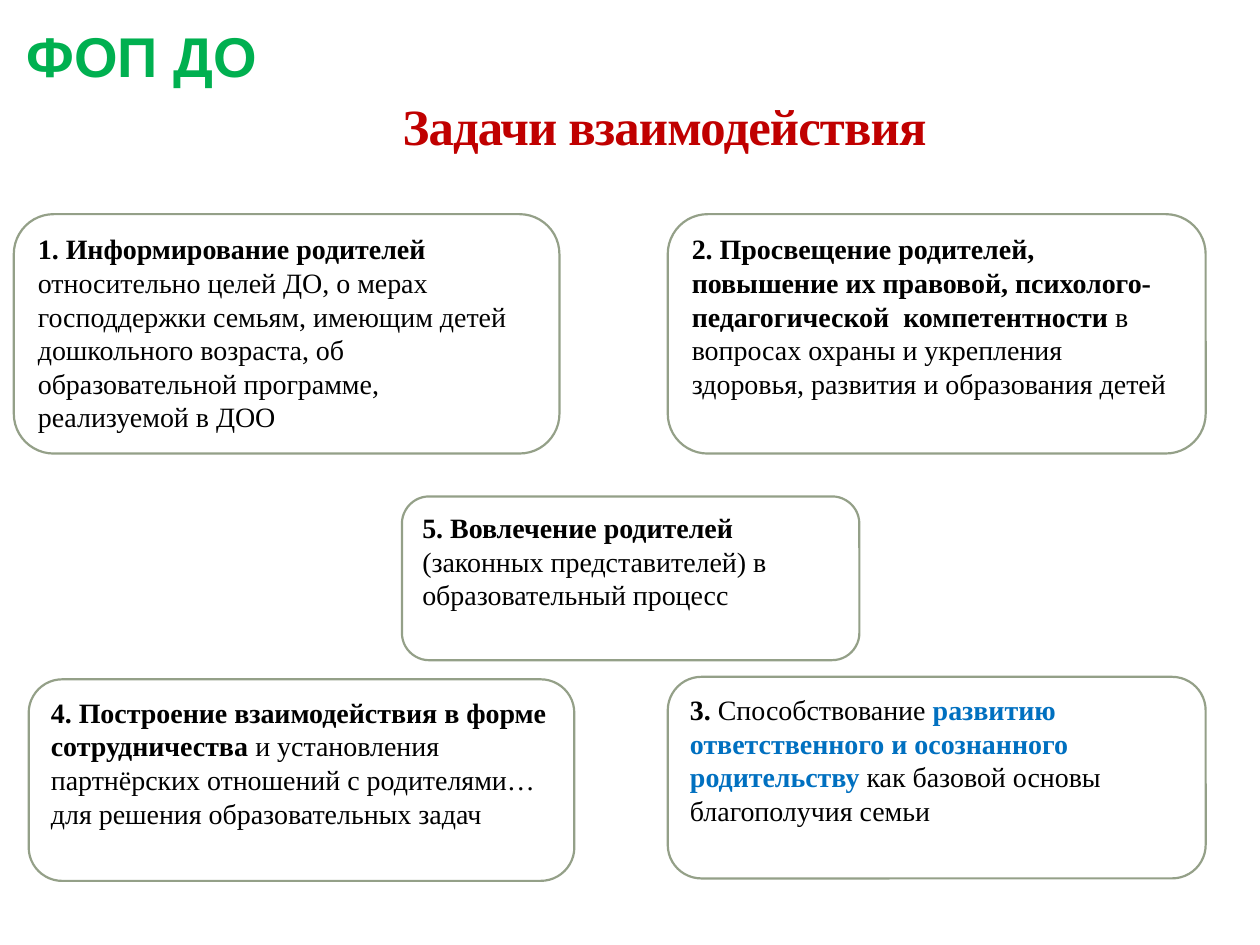
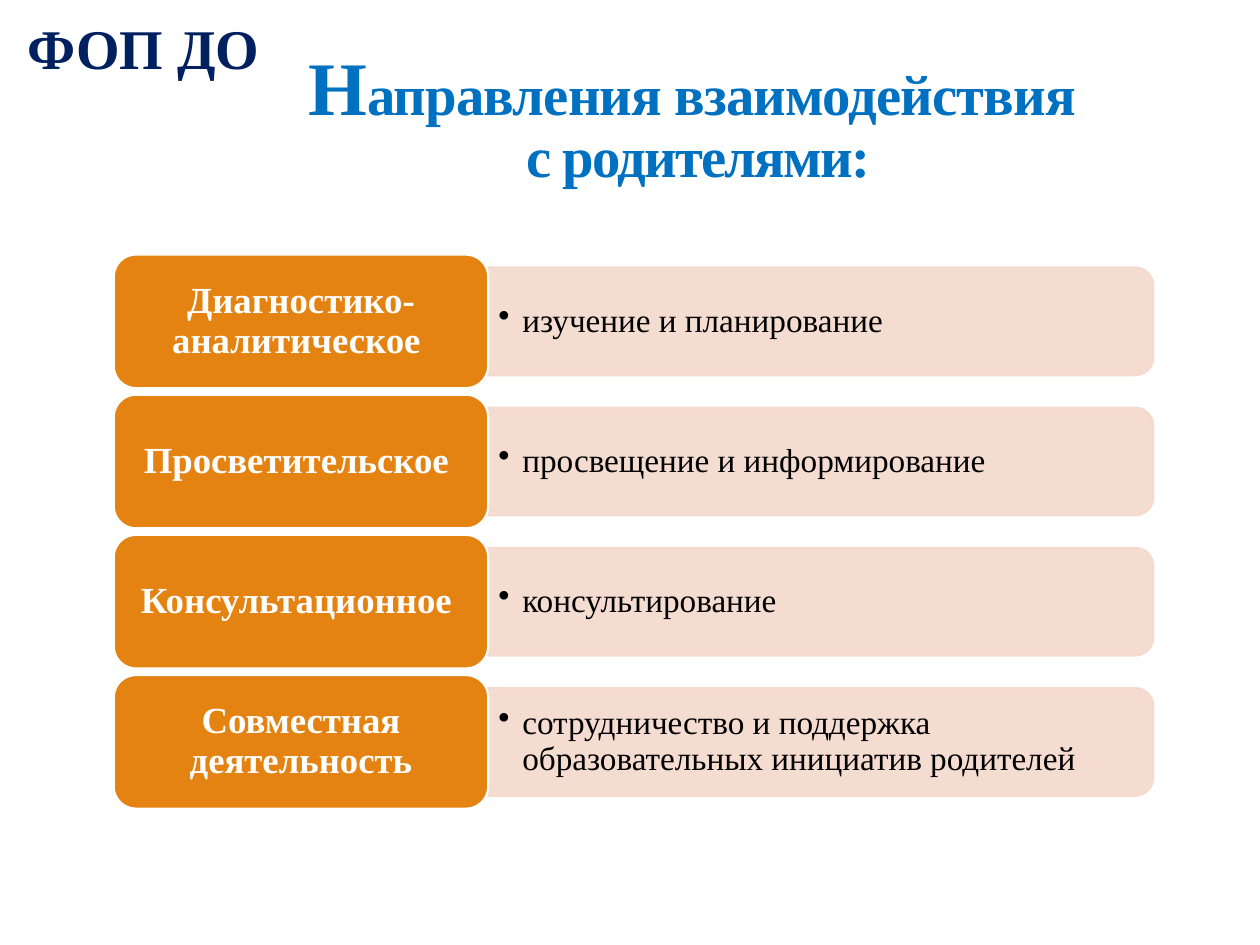
from copy import deepcopy
from dataclasses import dataclass

from lxml.etree import SubElement
from pptx import Presentation
from pptx.dml.color import RGBColor
from pptx.enum.shapes import MSO_SHAPE
from pptx.enum.text import MSO_ANCHOR, MSO_AUTO_SIZE, PP_ALIGN
from pptx.oxml.ns import qn
from pptx.util import Pt


@dataclass(frozen=True)
class Theme:
    font: str = "Times New Roman"
    tag_font: str = "Arial"
    white: str = "FFFFFF"
    black: str = "000000"
    red: str = "C00000"
    green: str = "00B050"
    blue: str = "0070C0"
    navy: str = "002060"
    sage: str = "94A088"
    orange: str = "E48312"
    peach: str = "F5D9CC"
    tag_size: float = 32
    tasks_title_size: float = 29
    initial_size: float = 43.2
    directions_title_size: float = 32.4
    card_size: float = 16
    label_size: float = 21
    detail_size: float = 19
    line_width: float = 1.25


theme = Theme()


def add_run(paragraph, text, size, color, bold=False, font=theme.font, spacing=0):
    for index, line in enumerate(text.split("\n")):
        if index:
            paragraph.add_line_break()
            paragraph._p[-1].append(deepcopy(run._r.rPr))
        run = paragraph.add_run()
        run.text = line
        run.font.name = font
        run.font.size = Pt(size)
        run.font.bold = bold
        run.font.color.rgb = RGBColor.from_string(color)
        if spacing:
            run._r.rPr.set("spc", str(int(spacing * 100)))


def add_box(slide, preset, bounds, fill, line=None, anchor=MSO_ANCHOR.TOP, align=PP_ALIGN.LEFT):
    shape = slide.shapes.add_shape(preset, *map(Pt, bounds))
    shape.shadow.inherit = False
    shape.fill.solid()
    shape.fill.fore_color.rgb = RGBColor.from_string(fill)
    if line:
        shape.line.color.rgb = RGBColor.from_string(line)
        shape.line.width = Pt(theme.line_width)
    else:
        shape.line.fill.background()
    shape.text_frame.word_wrap = True
    shape.text_frame.vertical_anchor = anchor
    shape.text_frame.paragraphs[0].alignment = align
    return shape


presentation = Presentation()
presentation.slide_width = Pt(720)
presentation.slide_height = Pt(540)

headings = [
    {
        "bounds": (82.8, 54, 594, 38.9),
        "anchor": MSO_ANCHOR.BOTTOM,
        "runs": [("Задачи взаимодействия", theme.tasks_title_size, theme.red, -0.5)],
        "tag": ((7.9, 8.6, 165, 45.4), theme.green, theme.tag_font),
    },
    {
        "bounds": (100.8, 27.4, 596.9, 84.2),
        "anchor": MSO_ANCHOR.MIDDLE,
        "runs": [
            ("Н", theme.initial_size, theme.blue, -0.5),
            ("аправления взаимодействия \n", theme.directions_title_size, theme.blue, -0.5),
            ("с родителями:", theme.directions_title_size, theme.blue, -1),
        ],
        "tag": ((8.6, 4.3, 165, 45.4), theme.navy, theme.font),
    },
]

slides = []
for heading in headings:
    slide = presentation.slides.add_slide(presentation.slide_layouts[5])
    slides.append(slide)
    title = slide.shapes.title
    title.left, title.top, title.width, title.height = map(Pt, heading["bounds"])
    title.text_frame.auto_size = MSO_AUTO_SIZE.NONE
    title.text_frame.word_wrap = True
    title.text_frame.vertical_anchor = heading["anchor"]
    paragraph = title.text_frame.paragraphs[0]
    paragraph.alignment = PP_ALIGN.CENTER
    paragraph.line_spacing = 0.85
    for text, size, color, spacing in heading["runs"]:
        add_run(paragraph, text, size, color, True, spacing=spacing)
    bounds, color, font = heading["tag"]
    tag = add_box(slide, MSO_SHAPE.RECTANGLE, bounds, theme.white)
    add_run(tag.text_frame.paragraphs[0], "ФОП ДО", theme.tag_size, color, True, font)

tasks_slide, directions_slide = slides

task_cards = [
    ((229.7, 283.7, 261.4, 93.6), [
        ("5. Вовлечение родителей ", True, theme.black),
        ("(законных представителей) в образовательный процесс", False, theme.black),
    ]),
    ((16.4, 388.2, 311.8, 115.2), [
        ("4. Построение взаимодействия в форме сотрудничества ", True, theme.black),
        ("и установления партнёрских отношений с родителями… "
         "для решения образовательных задач", False, theme.black),
    ]),
    ((381.6, 386.8, 307.4, 115.2), [
        ("3. ", True, theme.black),
        ("Способствование ", False, theme.black),
        ("развитию ответственного и осознанного родительству ", True, theme.blue),
        ("как базовой основы благополучия семьи", False, theme.black),
    ]),
    ((381.6, 122.4, 307.4, 136.8), [
        ("2. Просвещение родителей, повышение их правовой, "
         "психолого-педагогической  компетентности", True, theme.black),
        (" в вопросах охраны и укрепления здоровья, развития и образования детей",
         False, theme.black),
    ]),
    ((7.9, 122.4, 311.8, 136.8), [
        ("1. Информирование родителей ", True, theme.black),
        ("относительно целей ДО, о мерах господдержки семьям, имеющим детей "
         "дошкольного возраста, об\nобразовательной программе, реализуемой в ДОО",
         False, theme.black),
    ]),
]
for bounds, runs in task_cards:
    card = add_box(tasks_slide, MSO_SHAPE.ROUNDED_RECTANGLE, bounds, theme.white, theme.sage)
    for text, bold, color in runs:
        add_run(card.text_frame.paragraphs[0], text, theme.card_size, color, bold)

directions = [
    ("Диагностико-аналитическое ", "изучение и планирование"),
    ("Просветительское ", "просвещение и информирование"),
    ("Консультационное ", "консультирование"),
    ("Совместная деятельность", "сотрудничество и поддержка образовательных инициатив родителей"),
]
label_left, label_width, label_height = 65, 214, 76.3
first_top, row_pitch = 145.5, 80.1
bar_left, bar_length, bar_thickness = 279, 380, 61.5
bullet_indent = 13.7

for row, (name, detail) in enumerate(directions):
    top = first_top + row * row_pitch
    middle = top + label_height / 2

    bar_bounds = (bar_left + (bar_length - bar_thickness) / 2, middle - bar_length / 2,
                  bar_thickness, bar_length)
    bar = add_box(directions_slide, MSO_SHAPE.ROUND_2_SAME_RECTANGLE, bar_bounds,
                  theme.peach, theme.peach)
    bar.rotation = 90
    for color in bar._element.spPr.iter(qn("a:srgbClr")):
        SubElement(color, qn("a:alpha"), val="90000")

    detail_box = directions_slide.shapes.add_textbox(
        Pt(bar_left), Pt(middle - 27.4), Pt(377.3), Pt(54.8))
    frame = detail_box.text_frame
    frame.word_wrap = True
    frame.vertical_anchor = MSO_ANCHOR.MIDDLE
    frame.margin_left = frame.margin_right = Pt(5.8)
    frame.margin_top = frame.margin_bottom = Pt(2.9)
    paragraph = frame.paragraphs[0]
    properties = paragraph._p.get_or_add_pPr()
    properties.set("marL", str(Pt(bullet_indent)))
    properties.set("indent", str(-Pt(bullet_indent)))
    SubElement(properties, qn("a:buChar"), char="•")
    paragraph.line_spacing = 0.9
    add_run(paragraph, detail, theme.detail_size, theme.black)

    label = add_box(directions_slide, MSO_SHAPE.ROUNDED_RECTANGLE,
                    (label_left, top, label_width, label_height), theme.orange,
                    theme.white, MSO_ANCHOR.MIDDLE, PP_ALIGN.CENTER)
    frame = label.text_frame
    frame.margin_left = frame.margin_right = Pt(6.5)
    frame.margin_top = frame.margin_bottom = Pt(2.9)
    paragraph = frame.paragraphs[0]
    paragraph.line_spacing = 0.9
    add_run(paragraph, name, theme.label_size, theme.white, True)

presentation.save("out.pptx")
